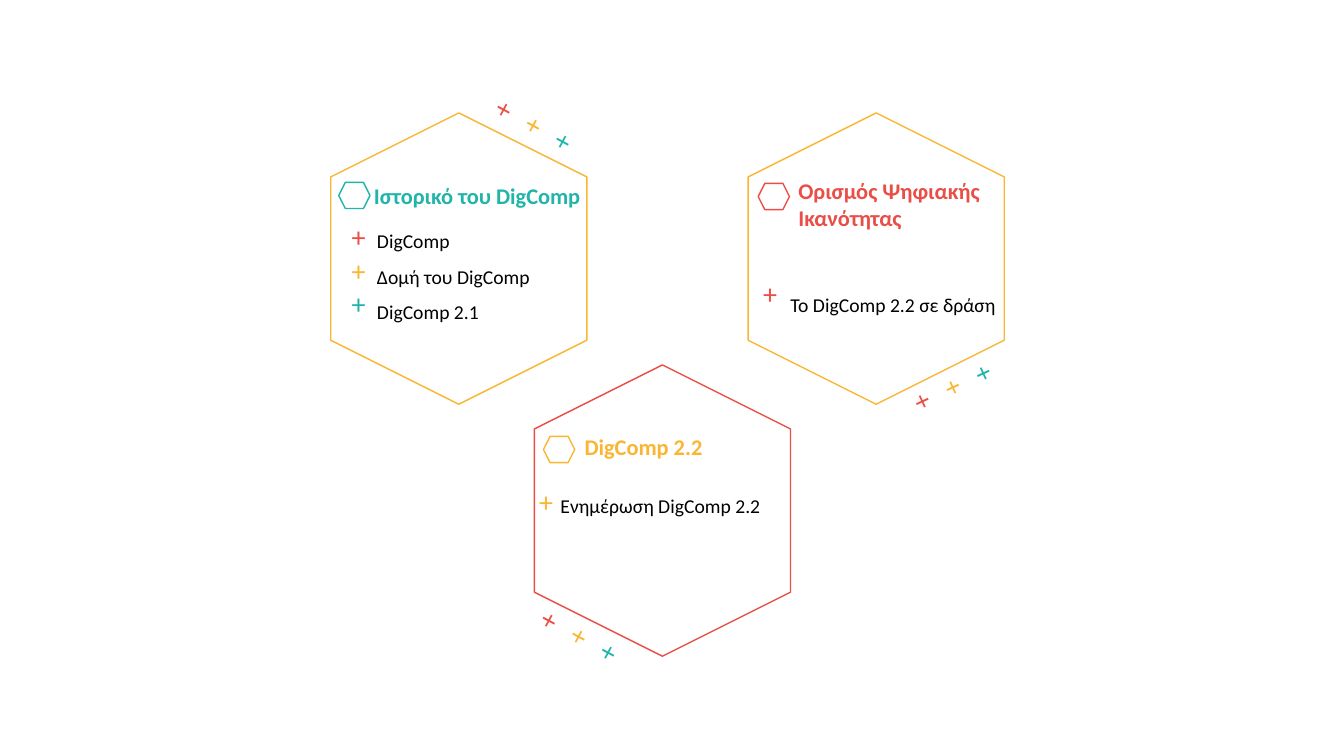
from pptx import Presentation
from pptx.dml.color import RGBColor
from pptx.enum import shapes, text
from pptx.util import Inches, Pt

RED = RGBColor(0xEA, 0x4E, 0x46)
YELLOW = RGBColor(0xFA, 0xB6, 0x32)
TEAL = RGBColor(0x21, 0xB4, 0xA9)
BLACK = RGBColor(0, 0, 0)

CARD_W, CARD_H = 2.54, 2.89
ICON_W, ICON_H = 0.31, 0.26
TRAIL_W, TRAIL_H = 0.43, 1.11
TITLE = {"size": Pt(16), "bold": True}
ITEM = {"size": Pt(14)}
PLUS = {"size": Pt(20)}

# Part positions (left, top, width, height) are relative to the card corner
CARDS = [
    {"corner": (3.28, 1.12), "outline": YELLOW, "color": TEAL,
     "icon": (0.08, 0.69),
     "title": "Ιστορικό του DigComp", "title_box": (0.33, 0.64, 2.41, 0.37),
     "items": ["DigComp", "Δομή του DigComp", "DigComp 2.1"],
     "items_box": (0.36, 0.99, 2.62, 1.16), "spacing": 1.5,
     "pluses": [RED, YELLOW, TEAL], "plus_box": (0.11, 1.01, 0.3, 1.11),
     "trail": (1.8, -0.47), "angle": 298.4},
    {"corner": (7.42, 1.12), "outline": YELLOW, "color": RED,
     "icon": (0.1, 0.7),
     "title": "Ορισμός Ψηφιακής Ικανότητας", "title_box": (0.4, 0.59, 2.13, 0.64),
     "items": ["Το DigComp 2.2 σε δράση"],
     "items_box": (0.32, 1.55, 2.93, 0.52), "spacing": 1.79,
     "pluses": [RED], "plus_box": (0.05, 1.57, 0.3, 0.44),
     "trail": (1.78, 2.14), "angle": 245.2},
    {"corner": (5.3, 3.62), "outline": RED, "color": YELLOW,
     "icon": (0.09, 0.71),
     "title": "DigComp 2.2", "title_box": (0.4, 0.63, 2.41, 0.37),
     "items": ["Ενημέρωση DigComp 2.2"],
     "items_box": (-0.28, 1.05, 2.62, 0.52), "spacing": 1.79,
     "align": text.PP_ALIGN.RIGHT,
     "pluses": [YELLOW], "plus_box": (-0.05, 1.14, 0.3, 0.44),
     "trail": (0.23, 2.1), "angle": 298.4},
]


def add_hexagon(s, x, y, w, h, color, rotation=0):
    sp = s.shapes.add_shape(shapes.MSO_SHAPE.HEXAGON, *map(Inches, (x, y, w, h)))
    sp.shadow.inherit = False
    sp.fill.background()
    sp.line.color.rgb = color
    sp.line.width = Pt(1)
    sp.rotation = rotation


def add_lines(s, box, lines, font, spacing=None, align=None, rotation=0):
    """Add a text box with one paragraph per (words, colour) pair."""
    sp = s.shapes.add_textbox(*map(Inches, box))
    sp.rotation = rotation
    tf = sp.text_frame
    tf.word_wrap = True
    for i, (words, color) in enumerate(lines):
        p = tf.paragraphs[0] if i == 0 else tf.add_paragraph()
        p.line_spacing, p.alignment = spacing, align
        r = p.add_run()
        r.text = words
        r.font.color.rgb = color
        for key, value in {"name": "Calibri", **font}.items():
            setattr(r.font, key, value)


def add_card(s, card):
    x, y = card["corner"]

    def place(box):
        return (x + box[0], y + box[1], *box[2:])

    # Upright outline: a wide hexagon turned about the card centre
    shift = (CARD_H - CARD_W) / 2
    add_hexagon(s, x - shift, y + shift, CARD_H, CARD_W, card["outline"], 90)

    # Heading with its icon
    add_hexagon(s, *place((*card["icon"], ICON_W, ICON_H)), card["color"])
    add_lines(s, place(card["title_box"]), [(card["title"], card["color"])], TITLE)

    # Items and their plus markers
    add_lines(s, place(card["items_box"]), [(item, BLACK) for item in card["items"]],
              ITEM, card["spacing"], card.get("align"))
    add_lines(s, place(card["plus_box"]), [("+", c) for c in card["pluses"]], PLUS)

    # Trail of pluses along the outer edge
    add_lines(s, place((*card["trail"], TRAIL_W, TRAIL_H)),
              [("+", c) for c in (RED, YELLOW, TEAL)], PLUS, rotation=card["angle"])


def main():
    prs = Presentation()
    prs.slide_width, prs.slide_height = Inches(13.33), Inches(7.5)
    s = prs.slides.add_slide(prs.slide_layouts[6])
    for card in CARDS:
        add_card(s, card)
    prs.save("out.pptx")


if __name__ == "__main__":
    main()
